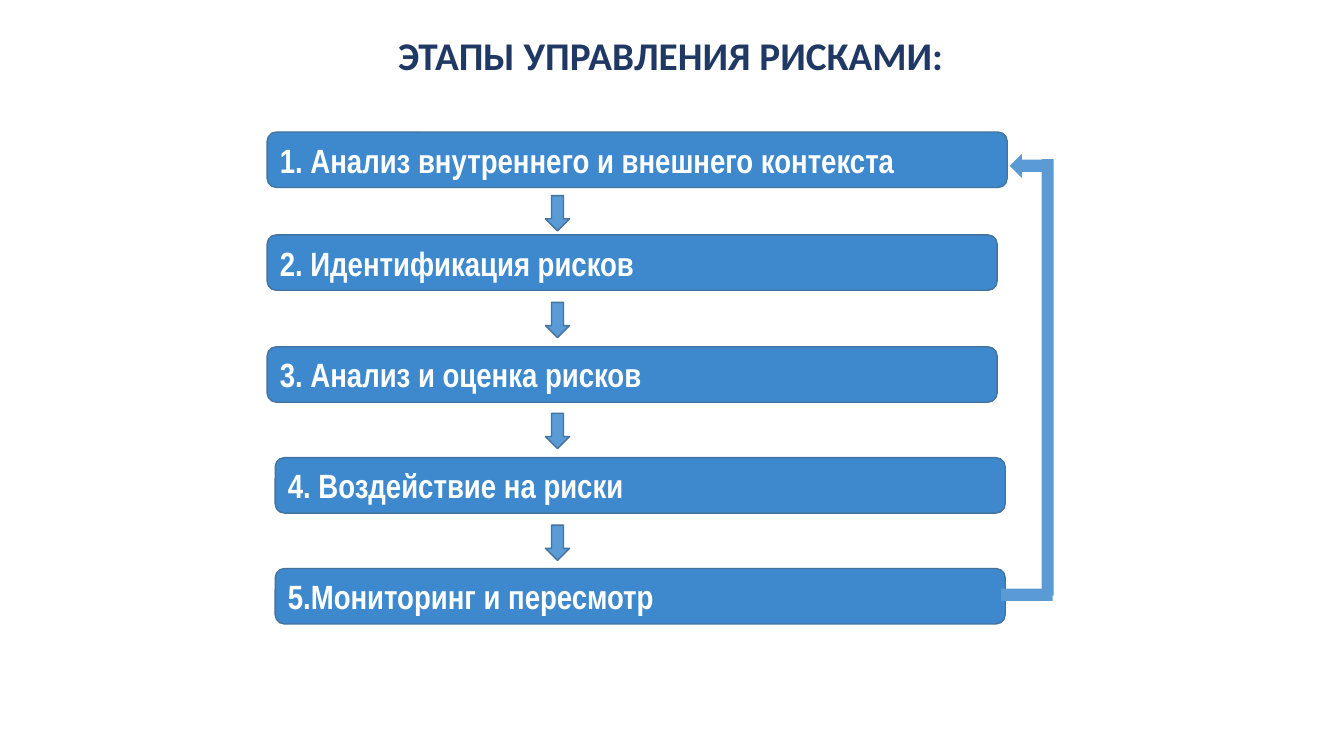
from pptx import Presentation
from pptx.dml.color import RGBColor
from pptx.enum.shapes import MSO_SHAPE
from pptx.enum.text import MSO_ANCHOR, PP_ALIGN
from pptx.util import Inches, Pt

TITLE = "ЭТАПЫ УПРАВЛЕНИЯ РИСКАМИ:"
STAGES = [  # text, left, top, width
    ("1. Анализ внутреннего и внешнего контекста", 2.65, 1.31, 7.34),
    ("2. Идентификация рисков", 2.65, 2.33, 7.24),
    ("3. Анализ и оценка рисков", 2.65, 3.44, 7.24),
    ("4. Воздействие на риски", 2.73, 4.54, 7.24),
    ("5.Мониторинг и пересмотр", 2.73, 5.64, 7.24),
]
STAGE_H = 0.55
ARROW_LEFT, ARROW_W, ARROW_H = 5.41, 0.24, 0.35
ARROW_TOPS = [1.94, 3, 4.1, 5.21]
RETURN_HEAD = (10.07, 1.47, ARROW_W, ARROW_H)
RETURN_BARS = [(10.33, 1.58, 0.12, 4.33), (9.93, 5.84, 0.51, 0.12)]
NAVY, BLUE, LIGHT_BLUE, EDGE, WHITE = "203864", "3E89CE", "5B9BD5", "43739E", "FFFFFF"


def rgb(color):
    return RGBColor.from_string(color)


def add_block(s, kind, box, fill, line=None):
    sp = s.shapes.add_shape(kind, *map(Inches, box))
    sp.shadow.inherit = False
    sp.fill.solid()
    sp.fill.fore_color.rgb = rgb(fill)
    if line:
        sp.line.color.rgb = rgb(line)
        sp.line.width = Pt(1)
    else:
        sp.line.fill.background()
    return sp


def write(sp, text, size, font, color, align):
    tf = sp.text_frame
    tf.word_wrap = True
    tf.vertical_anchor = MSO_ANCHOR.MIDDLE
    p = tf.paragraphs[0]
    p.alignment = align
    r = p.add_run()
    r.text = text
    r.font.size = Pt(size)
    r.font.name = font
    r.font.bold = True
    r.font.color.rgb = rgb(color)
    return p


prs = Presentation()
prs.slide_width, prs.slide_height = Inches(13.33), Inches(7.5)
s = prs.slides.add_slide(prs.slide_layouts[5])

title = s.shapes.title
title.left, title.top, title.width, title.height = map(Inches, (1.71, 0.13, 9.88, 0.89))
p = write(title, TITLE, 28, "Calibri", NAVY, PP_ALIGN.CENTER)
p.line_spacing = 0.9

for text, left, top, width in STAGES:
    sp = add_block(s, MSO_SHAPE.ROUNDED_RECTANGLE, (left, top, width, STAGE_H), BLUE, EDGE)
    write(sp, text, 24, "Arial Narrow", WHITE, PP_ALIGN.LEFT)

for top in ARROW_TOPS:
    add_block(s, MSO_SHAPE.DOWN_ARROW, (ARROW_LEFT, top, ARROW_W, ARROW_H), LIGHT_BLUE, EDGE)

head = add_block(s, MSO_SHAPE.DOWN_ARROW, RETURN_HEAD, LIGHT_BLUE)
head.rotation = 90
for bar in RETURN_BARS:
    add_block(s, MSO_SHAPE.RECTANGLE, bar, LIGHT_BLUE)

prs.save("out.pptx")
